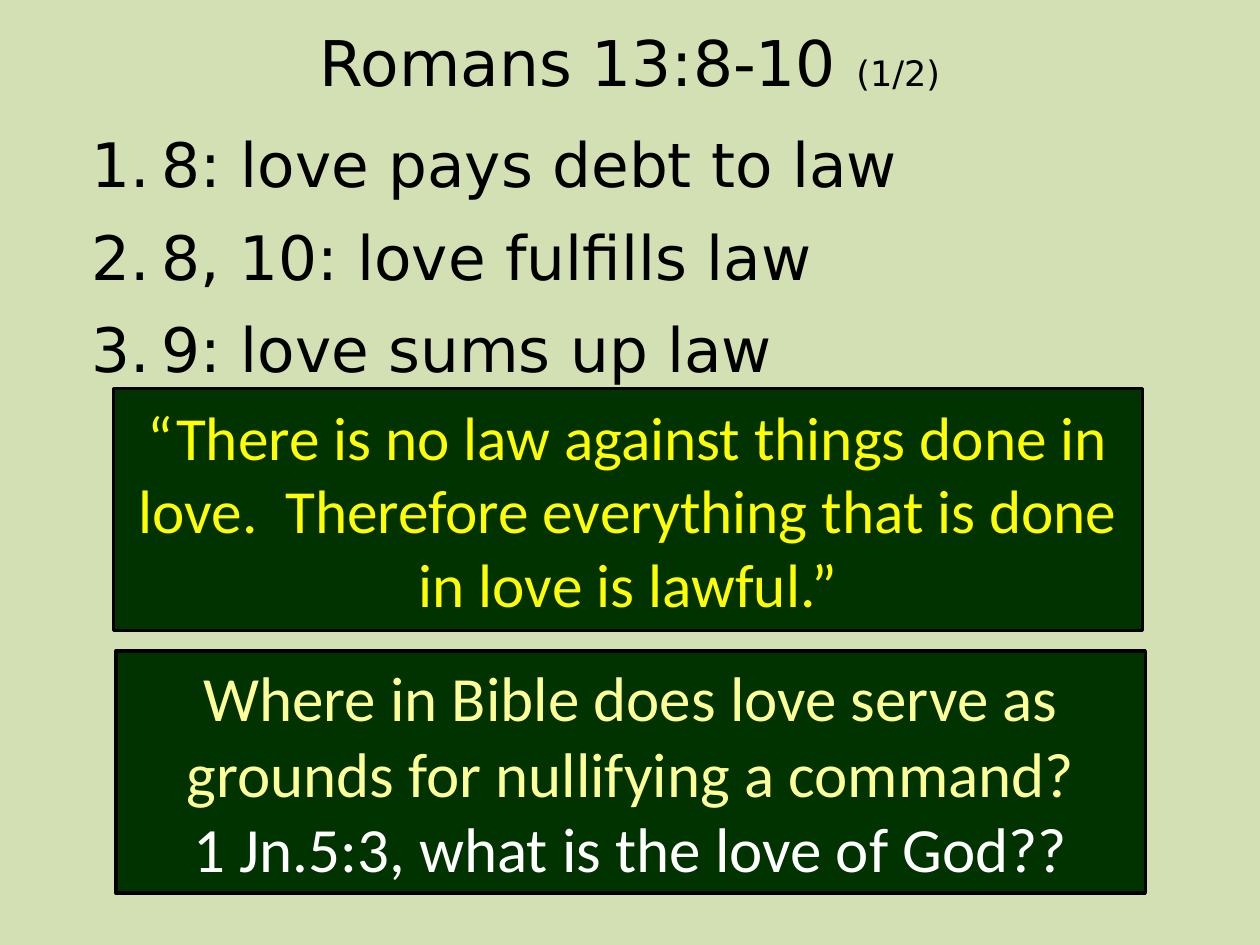
from lxml import etree
from pptx import Presentation
from pptx.dml.color import RGBColor
from pptx.enum.shapes import MSO_SHAPE
from pptx.enum.text import MSO_ANCHOR, PP_ALIGN
from pptx.oxml.ns import qn
from pptx.util import Inches, Pt

RECT = MSO_SHAPE.RECTANGLE
MIDDLE = MSO_ANCHOR.MIDDLE
CENTER = PP_ALIGN.CENTER
WIDE, HIGH = 10, 7.5
HEAD, BODY = "DejaVu Sans", "Calibri"
BLACK, GREEN = "000000", "003300"


def color(code):
    return RGBColor.from_string(code)


def style(font, size, name, code):
    font.size = Pt(size)
    font.name = name
    font.color.rgb = color(code)


def scale(box):
    """Turn shares of the slide's size into lengths."""
    x, y, w, h = box
    return Inches(x * WIDE), Inches(y * HIGH), Inches(w * WIDE), Inches(h * HIGH)


def fill_text(frame, lines, size, name, align=None):
    """Write one paragraph for each (text, colour) pair."""
    frame.word_wrap = True
    for i, (text, code) in enumerate(lines):
        para = frame.paragraphs[0] if i == 0 else frame.add_paragraph()
        para.text = text
        para.alignment = align
        style(para.font, size, name, code)


def add_title(slide, box, text, part):
    title = slide.shapes.title
    title.left, title.top, title.width, title.height = scale(box)
    frame = title.text_frame
    frame.vertical_anchor = MIDDLE
    fill_text(frame, [(text, BLACK)], 36, HEAD, CENTER)
    run = frame.paragraphs[0].add_run()
    run.text = part
    run.font.size = Pt(20)


def add_list(slide, box, items):
    frame = slide.shapes.add_textbox(*scale(box)).text_frame
    fill_text(frame, [(item, BLACK) for item in items], 35, HEAD)
    indent = Inches(0.56)
    for para in frame.paragraphs:
        para.space_after = Pt(11)
        props = para._p.get_or_add_pPr()
        props.set("marL", str(indent))
        props.set("indent", str(-indent))
        etree.SubElement(props, qn("a:buAutoNum"), type="arabicPeriod")


def add_panel(slide, box, lines, size):
    panel = slide.shapes.add_shape(RECT, *scale(box))
    panel.shadow.inherit = False
    panel.fill.solid()
    panel.fill.fore_color.rgb = color(GREEN)
    panel.line.color.rgb = color(BLACK)
    panel.line.width = Pt(2)
    panel.text_frame.vertical_anchor = MIDDLE
    fill_text(panel.text_frame, lines, size, BODY, CENTER)


def main():
    deck = Presentation()
    deck.slide_width, deck.slide_height = Inches(WIDE), Inches(HIGH)
    slide = deck.slides.add_slide(deck.slide_layouts[5])
    back = slide.background.fill
    back.solid()
    back.fore_color.rgb = color("D2E0B4")

    # Heading and numbered points
    add_title(slide, (0.075, 0.01, 0.85, 0.11), "Romans 13:8-10 ", "(1/2)")
    add_list(slide, (0.0625, 0.127, 0.875, 0.28), [
        "8: love pays debt to law",
        "8, 10: love fulfills law",
        "9: love sums up law",
    ])

    # Quotation and reply
    add_panel(slide, (0.09, 0.411, 0.817, 0.256), [
        ("“There is no law against things done in love.  "
         "Therefore everything that is done in love is lawful.”", "FFFF00"),
    ], 35)
    add_panel(slide, (0.092, 0.689, 0.817, 0.256), [
        ("Where in Bible does love serve as grounds for nullifying a command?",
         "FFFF99"),
        ("1 Jn.5:3, what is the love of God??", "FFFFFF"),
    ], 36)

    deck.save("out.pptx")


if __name__ == "__main__":
    main()
